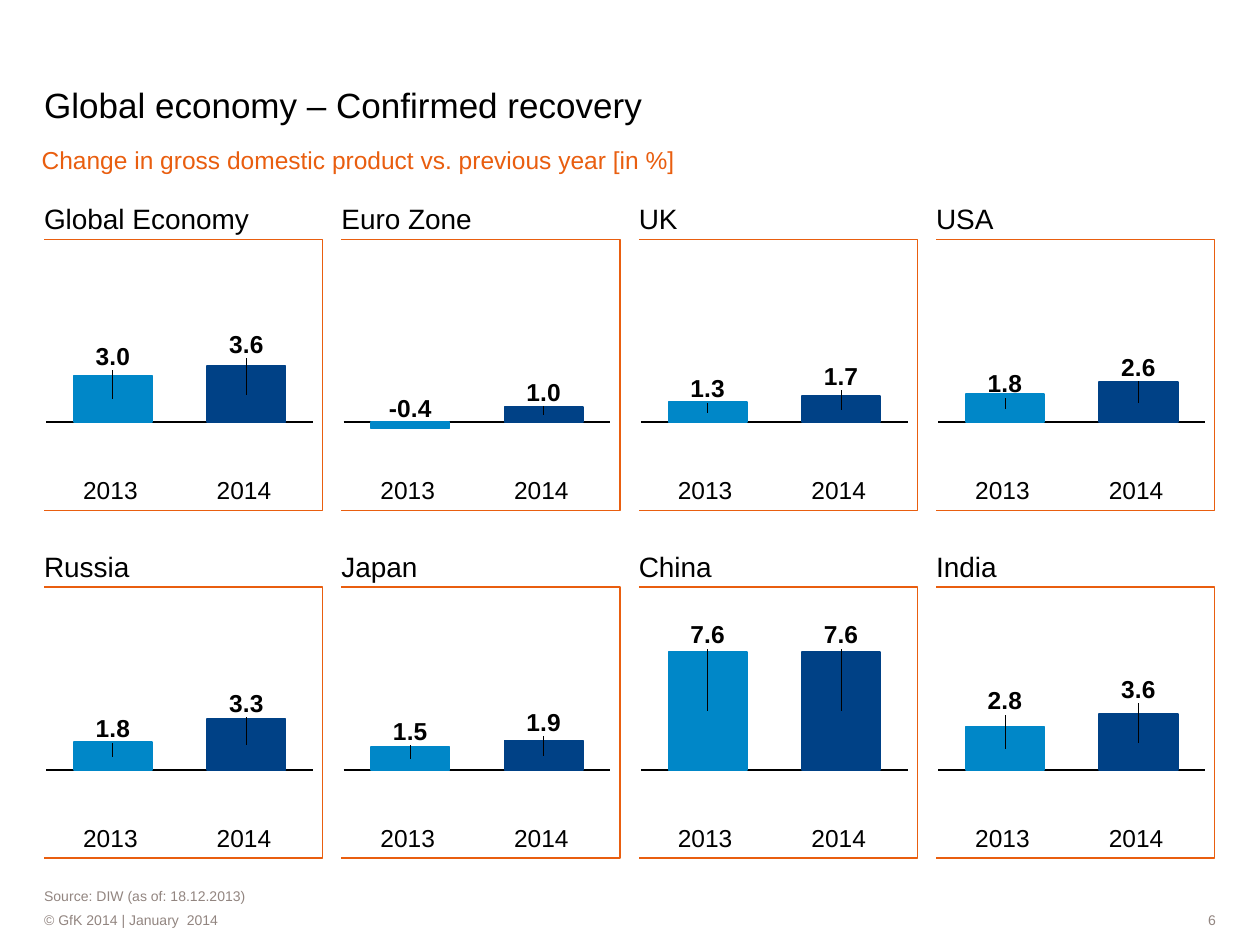
"""Build a slide of eight small charts of economic growth by region."""
from lxml.etree import SubElement
from pptx import Presentation
from pptx.chart.data import CategoryChartData
from pptx.dml.color import RGBColor
from pptx.enum.chart import XL_CHART_TYPE, XL_LABEL_POSITION, XL_TICK_LABEL_POSITION, XL_TICK_MARK
from pptx.enum.shapes import MSO_SHAPE
from pptx.enum.text import MSO_ANCHOR, MSO_AUTO_SIZE, PP_ALIGN
from pptx.oxml.ns import qn
from pptx.util import Inches, Pt

BLACK, ORANGE, GREY, WHITE = "000000", "E95E0F", "928580", "FFFFFF"
YEAR_COLORS = ("0087C8", "004186")
YEARS = (("2013", 0.31), ("2014", 1.37))
LOW, HIGH = -2, 9
PLOT_TOP, PLOT_HEIGHT = 0.34, 1.36
PANELS = (
    (
        ("Global Economy", 1.64, (3.0, 3.6), (0.15, 0.17), 0.28, 1.47),
        ("Euro Zone", 1.05, (-0.4, 1.0), (0.11, 0.11), 0.28, 1.58),
        ("UK", 0.31, (1.3, 1.7), (0.1, 0.15), 0.28, 1.57),
        ("USA", 0.47, (1.8, 2.6), (0.08, 0.11), 0.28, 1.47),
    ),
    (
        ("Russia", 0.68, (1.8, 3.3), (0.1, 0.12), 0.28, 1.47),
        ("Japan", 0.61, (1.5, 1.9), (0.12, 0.14), 0.28, 1.47),
        ("China", 0.58, (7.6, 7.6), (0.13, 0.13), 0.01, 1.73),
        ("India", 0.49, (2.8, 3.6), (0.2, 0.19), 0.28, 1.47),
    ),
)


def color(value):
    return RGBColor.from_string(value)


def manual_layout(parent, index, **settings):
    for old in parent.findall(qn("c:layout")):
        parent.remove(old)
    layout = SubElement(parent, qn("c:layout"))
    manual = SubElement(layout, qn("c:manualLayout"))
    for name, value in settings.items():
        SubElement(manual, qn(f"c:{name}")).set("val", str(value))
    parent.insert(index, layout)


class PanelSlide:
    font = "Arial"
    left, top = 0.35, 1.9
    column_pitch, row_pitch = 2.36, 2.76
    panel_width, panel_height = 2.21, 2.15

    def __init__(self, deck):
        self.page = deck.slides.add_slide(deck.slide_layouts.get_by_name("Content with Caption"))
        unused = self.page.placeholders[1].element
        unused.getparent().remove(unused)

    def corner(self, column, row):
        return self.left + column * self.column_pitch, self.top + row * self.row_pitch

    def style(self, font, size, value, bold=False):
        font.name, font.size, font.bold = self.font, Pt(size), bold
        font.color.rgb = color(value)

    def fill_text(self, shape, text, size, value=BLACK, align=PP_ALIGN.LEFT, anchor=MSO_ANCHOR.TOP, wrap=True, bottom=0):
        frame = shape.text_frame
        frame.text = text
        frame.word_wrap = wrap
        frame.auto_size = MSO_AUTO_SIZE.NONE if wrap else MSO_AUTO_SIZE.SHAPE_TO_FIT_TEXT
        frame.vertical_anchor = anchor
        frame.margin_left = frame.margin_right = frame.margin_top = 0
        frame.margin_bottom = Inches(bottom)
        paragraph = frame.paragraphs[0]
        paragraph.alignment, paragraph.space_before = align, Pt(0)
        self.style(paragraph.runs[0].font, size, value)

    def placeholder(self, index, text, area, size, value=BLACK, bottom=0):
        shape = self.page.placeholders[index]
        shape.left, shape.top, shape.width, shape.height = map(Inches, area)
        self.fill_text(shape, text, size, value, anchor=MSO_ANCHOR.BOTTOM, bottom=bottom)

    def text(self, text, area, size, value=BLACK, wrap=True):
        box = self.page.shapes.add_textbox(*map(Inches, area))
        self.fill_text(box, text, size, value, wrap=wrap)

    def footer(self, text, area, align):
        bar = self.page.shapes.add_shape(MSO_SHAPE.RECTANGLE, *map(Inches, area))
        bar.shadow.inherit = False
        bar.fill.solid()
        bar.fill.fore_color.rgb = color(WHITE)
        bar.line.fill.background()
        self.fill_text(bar, text, 8, GREY, align, MSO_ANCHOR.MIDDLE)

    def bracket(self, x, y):
        right, bottom = x + self.panel_width, y + self.panel_height
        builder = self.page.shapes.build_freeform(Inches(x), Inches(y))
        corners = ((right, y), (right, bottom), (x, bottom))
        builder.add_line_segments([tuple(map(Inches, corner)) for corner in corners], close=False)
        outline = builder.convert_to_shape()
        outline.shadow.inherit = False
        outline.fill.background()
        outline.line.color.rgb = color(ORANGE)
        outline.line.width = Pt(0.75)

    def chart(self, x, y, values, lifts, offset, height):
        data = CategoryChartData(number_format="0.0")
        data.categories = ("1", "2")
        data.add_series("Series 1", values)
        area = map(Inches, (x - 0.05, y + offset, 2.23, height))
        chart = self.page.shapes.add_chart(XL_CHART_TYPE.COLUMN_STACKED, *area, data).chart
        chart.has_legend = chart.has_title = False
        chart.font.name, chart.font.size, chart.font.bold = "Cambria", Pt(12), True
        chart.font.color.rgb = color(BLACK)
        manual_layout(
            chart.element.find(".//" + qn("c:plotArea")), 0,
            layoutTarget="inner", xMode="edge", yMode="edge", x=0.03,
            y=round((PLOT_TOP - offset) / height, 3), w=0.95, h=round(PLOT_HEIGHT / height, 3),
        )
        for axis in (chart.category_axis, chart.value_axis):
            axis.has_major_gridlines = False
            axis.major_tick_mark = axis.minor_tick_mark = XL_TICK_MARK.NONE
            axis.tick_label_position = XL_TICK_LABEL_POSITION.NONE
        chart.category_axis.format.line.color.rgb = color(BLACK)
        chart.category_axis.format.line.width = Pt(1)
        scale = chart.value_axis
        scale.format.line.fill.background()
        scale.minimum_scale, scale.maximum_scale, scale.major_unit = LOW, HIGH, 2
        self.bars(chart, values, lifts, height)

    def bars(self, chart, values, lifts, height):
        plot = chart.plots[0]
        plot.gap_width, plot.overlap, plot.vary_by_categories = 70, 100, False
        series = plot.series[0]
        series.format.fill.solid()
        series.format.fill.fore_color.rgb = color("A1AF00")
        labels = series.data_labels
        labels.show_value = True
        labels.number_format, labels.number_format_is_linked = "0.0", False
        self.style(labels.font, 14, BLACK, bold=True)
        for index, shade in enumerate(YEAR_COLORS):
            point = series.points[index]
            point.format.fill.solid()
            point.format.fill.fore_color.rgb = color(shade)
            point.format.line.color.rgb = color(shade)
            point.format.line.width = Pt(1)
            self.style(point.data_label.font, 14, BLACK, bold=True)
            point.data_label.position = XL_LABEL_POSITION.CENTER
        unit = PLOT_HEIGHT / (HIGH - LOW)
        for label, value, lift in zip(chart.element.iter(qn("c:dLbl")), values, lifts):
            rise = (max(value, 0) - value / 2) * unit + lift
            manual_layout(label, 1, x=0, y=round(-rise / height, 3))

    def panel(self, column, row, name, width, values, lifts, offset, height):
        x, y = self.corner(column, row)
        self.bracket(x, y)
        self.text(name, (x, y - 0.3, width, 0.27), 16, wrap=False)
        self.chart(x, y, values, lifts, offset, height)
        for year, shift in YEARS:
            self.text(year, (x + shift, y + 1.87, 0.44, 0.23), 14)


def main():
    deck = Presentation()
    deck.slide_width, deck.slide_height = Inches(10), Inches(7.5)
    slide = PanelSlide(deck)
    slide.footer("© GfK 2014 | January  2014", (0.35, 7.22, 7.72, 0.16), PP_ALIGN.LEFT)
    slide.footer("6", (8.23, 7.22, 1.42, 0.16), PP_ALIGN.RIGHT)
    slide.placeholder(0, "Global economy – Confirmed recovery", (0.35, 0.29, 8.58, 0.71), 20)
    slide.placeholder(2, "Source: DIW (as of: 18.12.2013)", (0.35, 7.06, 9.29, 0.16), 8, GREY, bottom=0.04)
    subtitle = "Change in gross domestic product vs. previous year [in %]"
    slide.text(subtitle, (0.33, 1.15, 5.05, 0.24), 14, ORANGE, wrap=False)
    for row, panels in enumerate(PANELS):
        for column, panel in enumerate(panels):
            slide.panel(column, row, *panel)
    deck.save("out.pptx")


if __name__ == "__main__":
    main()
